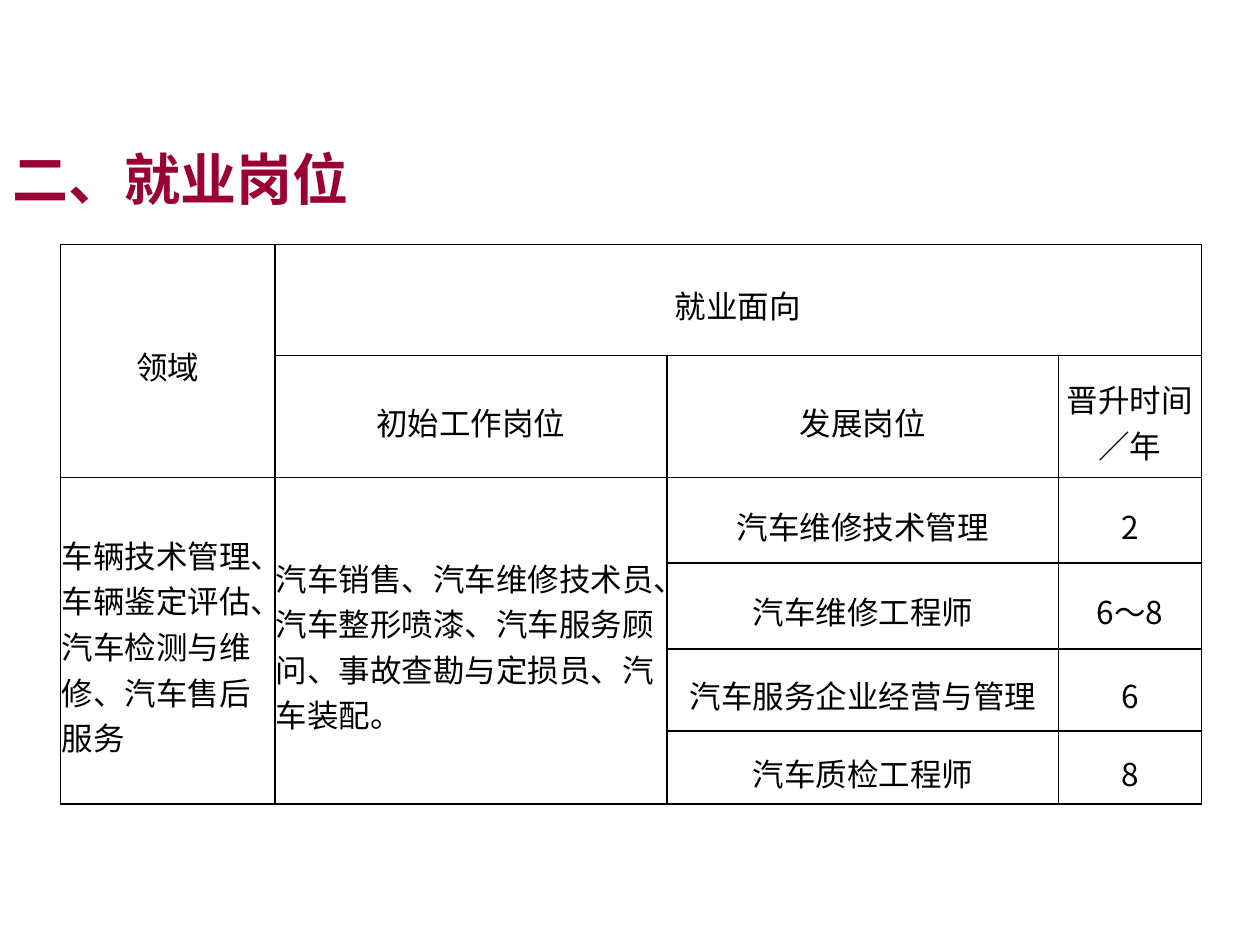
from lxml.etree import SubElement
from pptx import Presentation
from pptx.dml.color import RGBColor
from pptx.enum.text import MSO_ANCHOR as Anchor, MSO_AUTO_SIZE as AutoSize, PP_ALIGN as Align
from pptx.oxml.ns import qn
from pptx.util import Pt

COLORS = {"title": "990033", "text": "000000", "rule": "080000", "thin": "000000"}

COL_WIDTHS = [122.4, 224, 224, 81.4]
ROW_HEIGHTS = [63.4, 69.8, 49, 49, 46.8, 41.8]
HEADER_ROWS = 2
ROWS = [
    ["领域", "就业面向", "", ""],
    ["", "初始工作岗位", "发展岗位", "晋升时间／年"],
    ["车辆技术管理、车辆鉴定评估、汽车检测与维修、汽车售后服务",
     "汽车销售、汽车维修技术员、汽车整形喷漆、汽车服务顾问、事故查勘与定损员、汽车装配。",
     "汽车维修技术管理", "2"],
    ["", "", "汽车维修工程师", "6～8"],
    ["", "", "汽车服务企业经营与管理", "6"],
    ["", "", "汽车质检工程师", "8"],
]
# first row, first column, last row, last column
MERGES = [(0, 0, 1, 0), (0, 1, 0, 3), (2, 0, 5, 0), (2, 1, 5, 1)]


class Deck:
    font_name = "Noto Sans CJK SC"

    def __init__(self, width, height):
        self.prs = Presentation()
        self.prs.slide_width, self.prs.slide_height = Pt(width), Pt(height)
        self.s = self.prs.slides.add_slide(self.prs.slide_layouts[5])

    def style(self, p, size, color, align, bold=False):
        p.alignment = align
        font = p.font
        font.name, font.size, font.bold = self.font_name, Pt(size), bold
        font.color.rgb = RGBColor.from_string(COLORS[color])
        props = p._p.get_or_add_pPr().get_or_add_defRPr()
        SubElement(props, qn("a:ea"), typeface=self.font_name)

    def title(self, text, left, top, width, height):
        sp = self.s.shapes.title
        sp.left, sp.top, sp.width, sp.height = map(Pt, (left, top, width, height))
        tf = sp.text_frame
        tf.text = text
        tf.word_wrap = True
        tf.auto_size = AutoSize.SHAPE_TO_FIT_TEXT
        tf.vertical_anchor = Anchor.TOP
        self.style(tf.paragraphs[0], 32, "title", Align.LEFT, bold=True)

    def border(self, cell, side, color, width):
        ln = SubElement(cell._tc.get_or_add_tcPr(), qn(f"a:ln{side}"), w=str(Pt(width)))
        fill = SubElement(ln, qn("a:solidFill"))
        SubElement(fill, qn("a:srgbClr"), val=COLORS[color])

    def cell(self, cell, text, align, thin_sides):
        for side in "LRTB":
            self.border(cell, side, *(("thin", 0.75) if side in thin_sides else ("rule", 1)))
        cell.fill.background()
        cell.vertical_anchor = Anchor.MIDDLE
        cell.margin_left = cell.margin_right = Pt(0.7)
        cell.margin_top, cell.margin_bottom = Pt(5.8), Pt(0)
        if text:
            cell.text = text
            self.style(cell.text_frame.paragraphs[0], 18, "text", align)

    def table(self, left, top):
        shape = self.s.shapes.add_table(
            len(ROW_HEIGHTS), len(COL_WIDTHS), Pt(left), Pt(top),
            Pt(sum(COL_WIDTHS)), Pt(sum(ROW_HEIGHTS)))
        table = shape.table
        table.first_row = table.horz_banding = False
        for column, width in zip(table.columns, COL_WIDTHS):
            column.width = Pt(width)
        for row, height in zip(table.rows, ROW_HEIGHTS):
            row.height = Pt(height)
        for r, texts in enumerate(ROWS):
            for c, text in enumerate(texts):
                body = r >= HEADER_ROWS
                align = Align.LEFT if body and c < 2 else Align.CENTER
                thin_sides = ("R" if c else "") + ("B" if body and c < 2 else "")
                self.cell(table.cell(r, c), text, align, thin_sides)
        for r1, c1, r2, c2 in MERGES:
            table.cell(r1, c1).merge(table.cell(r2, c2))


def main():
    deck = Deck(720, 540)
    deck.title("二、就业岗位", 0, 79.2, 423.4, 46)
    deck.table(34.6, 139.7)
    deck.prs.save("out.pptx")


if __name__ == "__main__":
    main()
